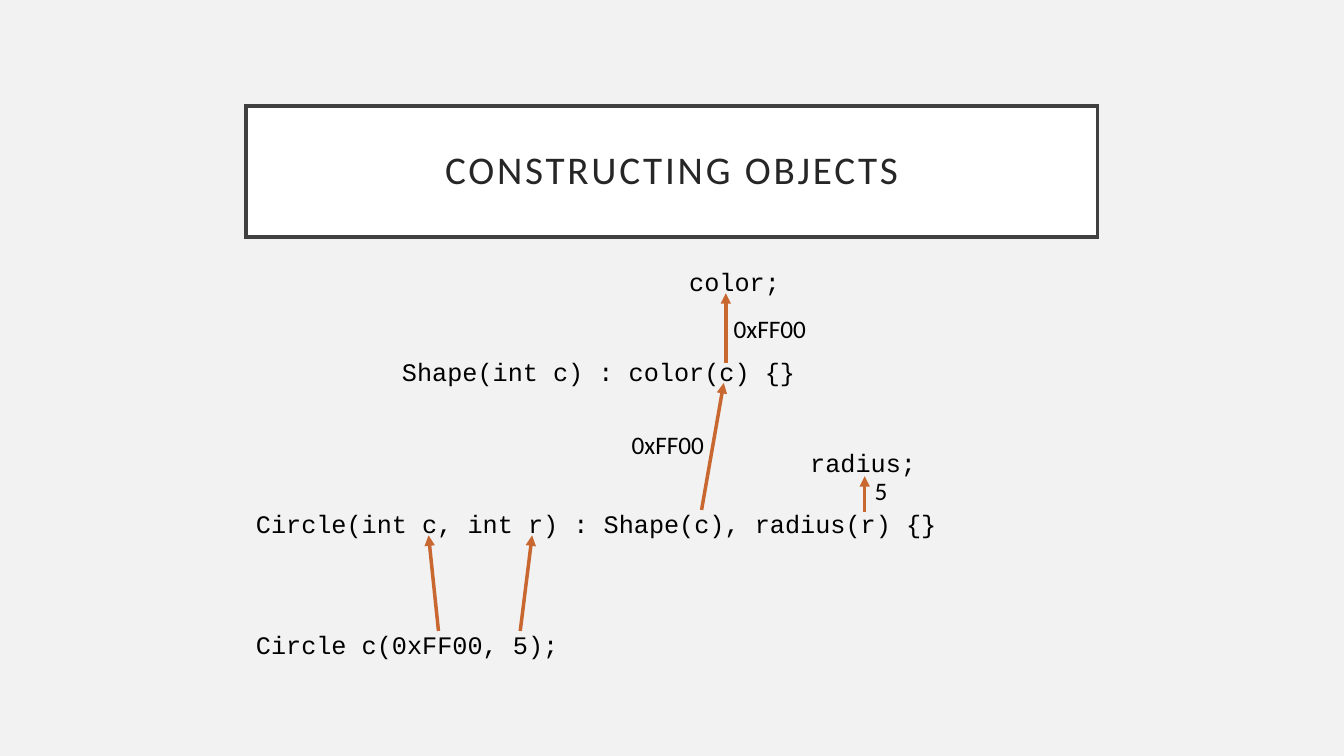
from pptx import Presentation
from pptx.dml.color import RGBColor
from pptx.enum.shapes import MSO_CONNECTOR, MSO_SHAPE
from pptx.enum.text import MSO_ANCHOR, PP_ALIGN
from pptx.oxml.ns import qn
from pptx.util import Cm, Pt
from lxml import etree

RECT = MSO_SHAPE.RECTANGLE
LINE = MSO_CONNECTOR.STRAIGHT
MIDDLE = MSO_ANCHOR.MIDDLE
CENTER = PP_ALIGN.CENTER

COLORS = {"back": "F2F2F2", "panel": "FFFFFF", "frame": "404040",
          "title": "262626", "text": "000000", "arrow": "C96731"}


def rgb(name):
    return RGBColor.from_string(COLORS[name])


def add_run(para, text, font, size, color):
    run = para.add_run()
    run.text = text
    run.font.name = font
    run.font.size = Pt(size)
    run.font.color.rgb = rgb(color)
    return run


prs = Presentation()
prs.slide_width, prs.slide_height = Cm(33.87), Cm(19.05)
slide = prs.slides.add_slide(prs.slide_layouts[6])
slide.background.fill.solid()
slide.background.fill.fore_color.rgb = rgb("back")
shapes = slide.shapes

# Title panel
panel = shapes.add_shape(RECT, Cm(6.2), Cm(2.67), Cm(21.46), Cm(3.3))
panel.shadow.inherit = False
panel.fill.solid()
panel.fill.fore_color.rgb = rgb("panel")
panel.line.color.rgb = rgb("frame")
panel.line.width = Pt(2.5)
etree.SubElement(panel.line._get_or_add_ln(), qn("a:miter"), lim="800000")
panel.text_frame.vertical_anchor = MIDDLE
para = panel.text_frame.paragraphs[0]
para.alignment = CENTER
para.line_spacing = 0.9
run = add_run(para, "CONSTRUCTING OBJECTS", "Calibri", 28, "title")
run.font._element.set("spc", "200")

# Code lines: blank rows above, left indent in cm, text
ROW = 21.6  # row height in points
code = [
    (0, 10.92, "color;"),
    (2, 3.68, "Shape(int c) : color(c) {}"),
    (2, 13.97, "radius;"),
    (1, 0, "Circle(int c, int r) : Shape(c), radius(r) {}"),
    (3, 0, "Circle c(0xFF00, 5);"),
]
frame = shapes.add_textbox(Cm(6.2), Cm(6.58), Cm(21.46), Cm(10.26)).text_frame
frame.word_wrap = True
for i, (rows, indent, text) in enumerate(code):
    para = frame.add_paragraph() if i else frame.paragraphs[0]
    para.space_before = Pt(rows * ROW)
    para._p.get_or_add_pPr().set("marL", str(Cm(indent)))
    add_run(para, text, "Courier New", 18, "text")

# Arrows from each argument to where its value goes
arrows = [
    (11.05, 15.9, 10.8, 13.49),
    (13.11, 15.9, 13.41, 13.49),
    (17.68, 12.85, 18.24, 9.65),
    (21.79, 12.9, 21.79, 12),
    (18.29, 9.14, 18.29, 7.39),
]
for ends in arrows:
    arrow = shapes.add_connector(LINE, *map(Cm, ends))
    arrow.line.color.rgb = rgb("arrow")
    arrow.line.width = Pt(2.5)
    etree.SubElement(arrow.line._get_or_add_ln(), qn("a:tailEnd"), type="triangle")
    etree.SubElement(arrow._element.spPr, qn("a:effectLst"))

# Values passed along the arrows
labels = [(15.67, 10.69, 2.49, "0xFF00"), (21.79, 11.86, 1, "5"),
          (18.24, 7.77, 2.49, "0xFF00")]
for left, top, width, text in labels:
    frame = shapes.add_textbox(Cm(left), Cm(top), Cm(width), Cm(1.03)).text_frame
    frame.word_wrap = True
    add_run(frame.paragraphs[0], text, "Calibri", 18, "text")

prs.save("out.pptx")
